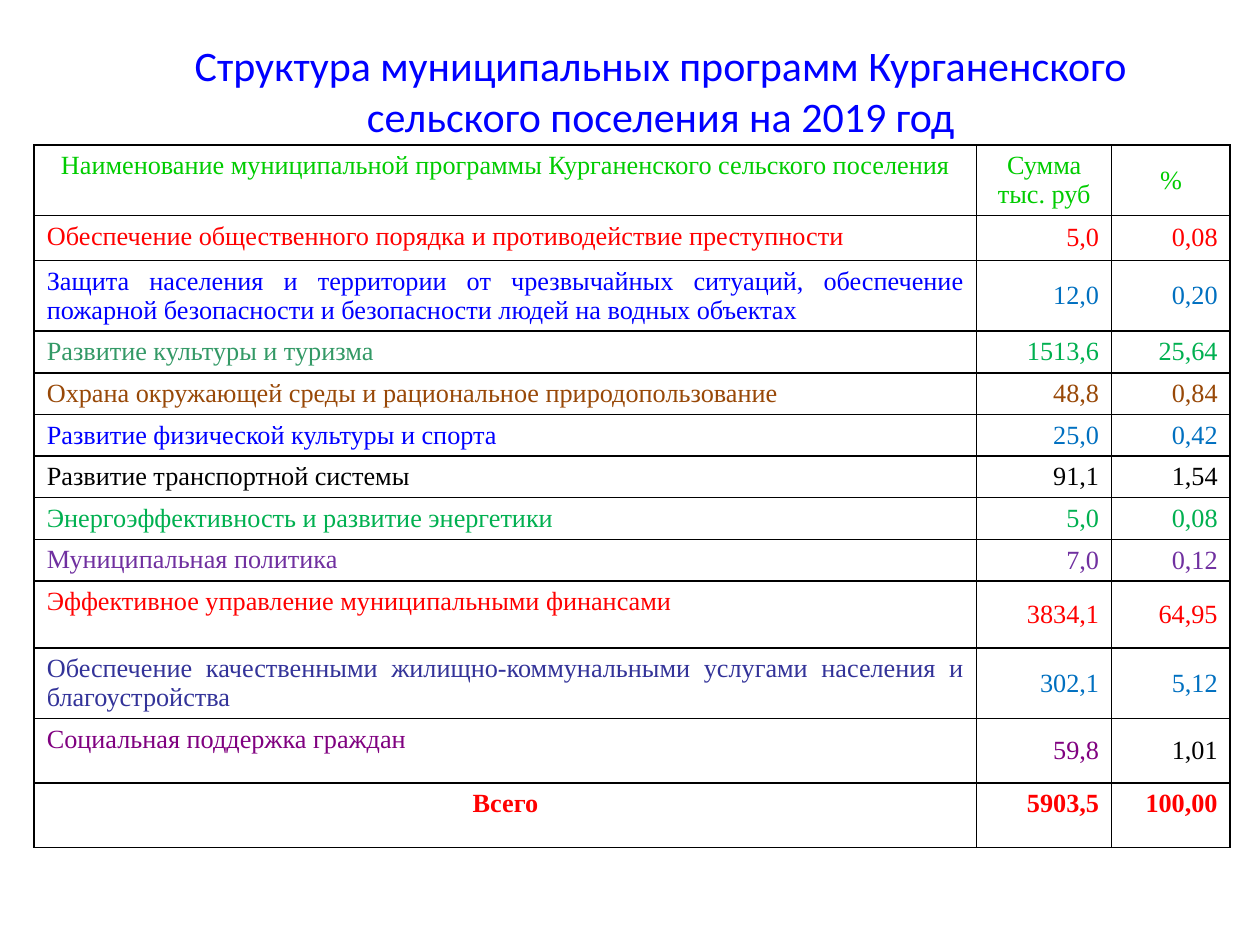
from lxml.etree import SubElement
from pptx import Presentation
from pptx.dml.color import RGBColor
from pptx.enum.text import MSO_ANCHOR, MSO_AUTO_SIZE, PP_ALIGN
from pptx.oxml.ns import qn
from pptx.util import Cm, Pt

WHITE = RGBColor(255, 255, 255)
BLACK = RGBColor(0, 0, 0)
RED = RGBColor(255, 0, 0)
BLUE = RGBColor(0, 0, 255)
SKY = RGBColor(0, 112, 192)
LIME = RGBColor(0, 204, 0)
GREEN = RGBColor(0, 176, 80)
SEA = RGBColor(51, 153, 102)
BROWN = RGBColor(152, 72, 7)
VIOLET = RGBColor(112, 48, 160)
NAVY = RGBColor(51, 51, 153)
PLUM = RGBColor(128, 0, 128)

HEAD = ("Наименование муниципальной программы Курганенского сельского поселения",
        "Сумма тыс. руб", "%")
TOTAL = ("Всего", "5903,5", "100,00")
ROWS = [
    (0.91, "Обеспечение общественного порядка и противодействие преступности",
     "5,0", "0,08", RED, RED, RED),
    (1.19, "Защита населения и территории от чрезвычайных ситуаций, обеспечение "
     "пожарной безопасности и безопасности людей на водных объектах",
     "12,0", "0,20", BLUE, SKY, SKY),
    (0.66, "Развитие культуры и туризма", "1513,6", "25,64", SEA, GREEN, GREEN),
    (0.76, "Охрана окружающей среды и рациональное природопользование",
     "48,8", "0,84", BROWN, BROWN, BROWN),
    (0.84, "Развитие физической культуры и спорта", "25,0", "0,42", BLUE, SKY, SKY),
    (0.84, "Развитие транспортной системы", "91,1", "1,54", BLACK, BLACK, BLACK),
    (0.66, "Энергоэффективность и развитие энергетики",
     "5,0", "0,08", GREEN, GREEN, GREEN),
    (0.66, "Муниципальная политика", "7,0", "0,12", VIOLET, VIOLET, VIOLET),
    (1.35, "Эффективное управление муниципальными финансами",
     "3834,1", "64,95", RED, RED, RED),
    (0.51, "Обеспечение качественными жилищно-коммунальными услугами населения "
     "и благоустройства", "302,1", "5,12", NAVY, SKY, SKY),
    (1.3, "Социальная поддержка граждан", "59,8", "1,01", PLUM, PLUM, BLACK),
]


class Deck:
    """Hold the style and the current slide."""

    def __init__(self):
        self.prs = Presentation()
        self.prs.slide_width, self.prs.slide_height = Cm(25.4), Cm(19.05)
        self.slide = self.prs.slides.add_slide(self.prs.slide_layouts[5])
        self.face, self.size = "Times New Roman", Pt(15)

    def label(self, frame, text, color, align, face, size, bold=False):
        par = frame.paragraphs[0]
        par.alignment = align
        run = par.add_run()
        run.text = text
        font = run.font
        font.name, font.size, font.bold = face, size, bold
        font.color.rgb = color

    def title(self, text, box):
        shape = self.slide.shapes.title
        shape.left, shape.top, shape.width, shape.height = map(Cm, box)
        frame = shape.text_frame
        frame.word_wrap = True
        frame.auto_size = MSO_AUTO_SIZE.NONE
        frame.vertical_anchor = MSO_ANCHOR.MIDDLE
        self.label(frame, text, BLUE, PP_ALIGN.CENTER, "Calibri", Pt(24))

    def table(self, box, widths, heights):
        frame = self.slide.shapes.add_table(len(heights), len(widths), *map(Cm, box))
        grid = frame.table
        grid.first_row = grid.horz_banding = False
        for col, width in zip(grid.columns, widths):
            col.width = Cm(width)
        for row, height in zip(grid.rows, heights):
            row.height = Cm(height)
        frame.height = Cm(box[3])
        return grid

    def border(self, cell):
        props = cell._tc.get_or_add_tcPr()
        for side in ("a:lnL", "a:lnR", "a:lnT", "a:lnB"):
            line = SubElement(props, qn(side), w=str(Pt(1)))
            fill = SubElement(line, qn("a:solidFill"))
            SubElement(fill, qn("a:srgbClr"), val=str(BLACK))

    def cell(self, cell, text, color, align, anchor, bold=False):
        self.border(cell)
        cell.fill.solid()
        cell.fill.fore_color.rgb = WHITE
        cell.vertical_anchor = anchor
        self.label(cell.text_frame, text, color, align, self.face, self.size, bold)

    def row(self, cells, texts, colors, aligns, anchor, bold=False):
        anchors = (MSO_ANCHOR.TOP, anchor, anchor)
        for cell, text, color, align, place in zip(cells, texts, colors, aligns, anchors):
            self.cell(cell, text, color, align, place, bold)


def main():
    deck = Deck()
    deck.title("Структура муниципальных программ Курганенского сельского поселения "
               "на 2019 год", (2.54, 0.71, 21.56, 2.21))
    heights = [1.04, *(row[0] for row in ROWS), 1.3]
    grid = deck.table((0.69, 2.92, 24.1, 14.78), (19, 2.72, 2.39), heights)
    head, *body, total = [row.cells for row in grid.rows]
    mid, right = PP_ALIGN.CENTER, PP_ALIGN.RIGHT
    deck.row(head, HEAD, [LIME] * 3, [mid] * 3, MSO_ANCHOR.MIDDLE)
    for cells, row in zip(body, ROWS):
        deck.row(cells, row[1:4], row[4:], (PP_ALIGN.JUSTIFY, right, right),
                 MSO_ANCHOR.MIDDLE)
    deck.row(total, TOTAL, [RED] * 3, (mid, right, right), MSO_ANCHOR.TOP, True)
    deck.prs.save("out.pptx")


if __name__ == "__main__":
    main()
